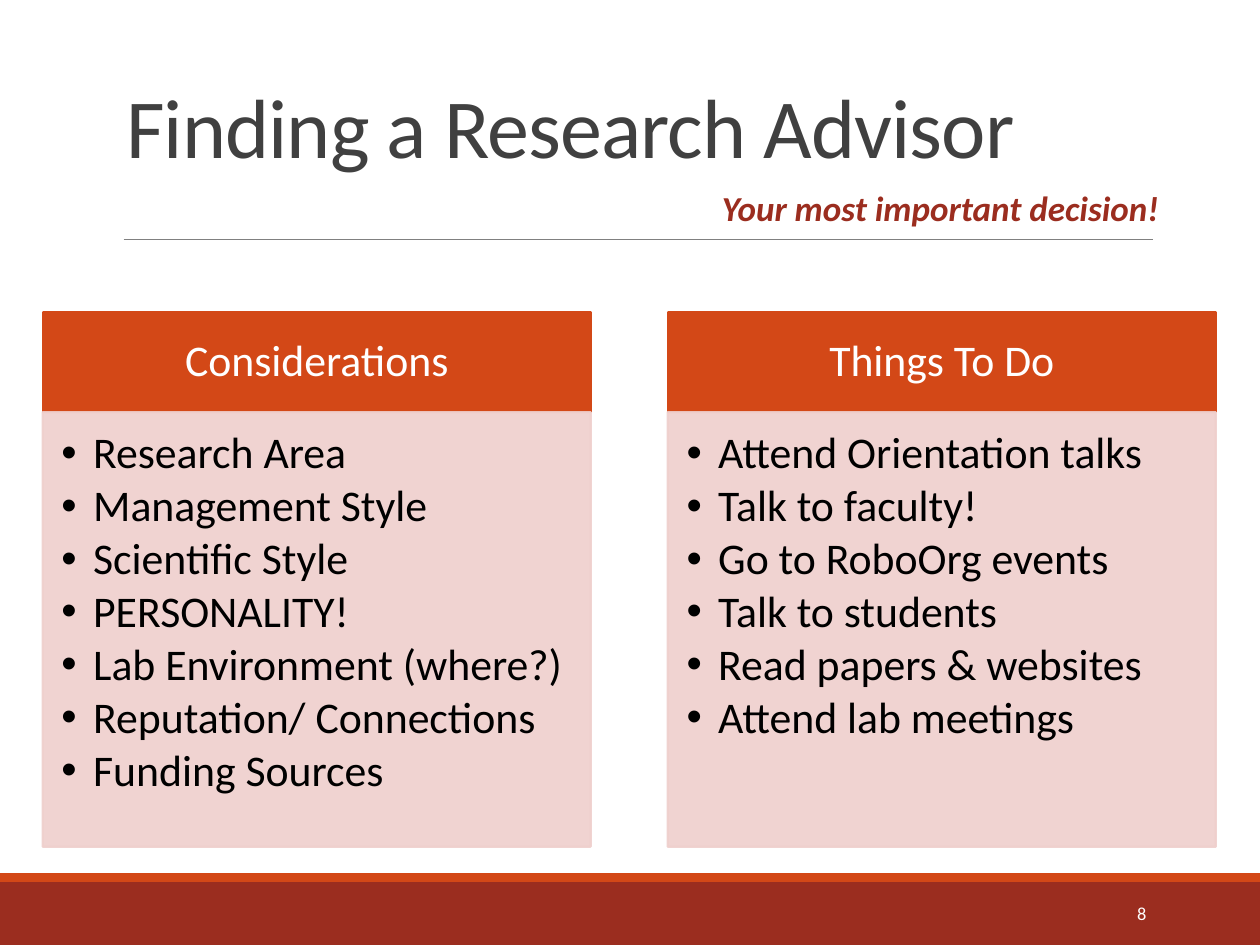
from lxml import etree
from pptx import Presentation
from pptx.dml.color import RGBColor
from pptx.enum import shapes, text
from pptx.oxml.ns import qn
from pptx.util import Cm, Pt

# Content
TITLE = "Finding a Research Advisor"
SUBTITLE = "Your most important decision!"
PAGE_NUMBER = "8"
CARDS = [
    ("Considerations", [
        "Research Area", "Management Style", "Scientific Style", "PERSONALITY!",
        "Lab Environment (where?)", "Reputation/ Connections", "Funding Sources",
    ]),
    ("Things To Do", [
        "Attend Orientation talks", "Talk to faculty!", "Go to RoboOrg events",
        "Talk to students", "Read papers & websites", "Attend lab meetings",
    ]),
]

# Style
FONT = "Calibri"
ORANGE = RGBColor(0xD3, 0x48, 0x17)
DARK_RED = RGBColor(0x9B, 0x2D, 0x1F)
PINK = RGBColor(0xEF, 0xCF, 0xCC)
GRAY = RGBColor(0x80, 0x80, 0x80)
CHARCOAL = RGBColor(0x40, 0x40, 0x40)
WHITE = RGBColor(0xFF, 0xFF, 0xFF)
BLACK = RGBColor(0, 0, 0)

# Layout, in centimetres
SLIDE_WIDTH, SLIDE_HEIGHT = 25.4, 19.05
FOOTER_TOP, STRIPE_TOP = 17.78, 17.6
CARD_LEFT, CARD_TOP, CARD_WIDTH, CARD_PITCH = 0.86, 6.3, 11.05, 12.6
HEADER_HEIGHT, BODY_HEIGHT = 2.01, 8.76


def add_box(slide, left, top, width, height, color, outlined=False, opacity=None):
    shape = slide.shapes.add_shape(
        shapes.MSO_SHAPE.RECTANGLE, Cm(left), Cm(top), Cm(width), Cm(height))
    shape.shadow.inherit = False
    shape.fill.solid()
    shape.fill.fore_color.rgb = color
    if outlined:
        shape.line.color.rgb = color
        shape.line.width = Pt(1.25)
    else:
        shape.line.fill.background()
    if opacity:
        for node in shape._element.spPr.iter(qn("a:srgbClr")):
            etree.SubElement(node, qn("a:alpha")).set("val", str(opacity * 1000))
    return shape


def set_frame(frame, anchor, margins):
    frame.word_wrap = True
    frame.auto_size = text.MSO_AUTO_SIZE.NONE
    frame.vertical_anchor = anchor
    (frame.margin_left, frame.margin_top,
     frame.margin_right, frame.margin_bottom) = [Cm(margin) for margin in margins]


def format_paragraph(paragraph, size, color, align, line_spacing=0.9, after=0):
    paragraph.alignment = align
    paragraph.line_spacing = line_spacing
    paragraph.space_before = Pt(0)
    paragraph.space_after = Pt(after)
    for run in paragraph.runs:
        run.font.name = FONT
        run.font.size = Pt(size)
        run.font.color.rgb = color


def add_bullet(paragraph):
    properties = paragraph._p.get_or_add_pPr()
    properties.set("marL", str(Cm(0.64)))
    properties.set("indent", str(-Cm(0.64)))
    etree.SubElement(properties, qn("a:buFont")).set("typeface", "Arial")
    etree.SubElement(properties, qn("a:buChar")).set("char", "•")


def add_label(slide, left, top, width, height, words, size, color, anchor, margins):
    box = slide.shapes.add_textbox(Cm(left), Cm(top), Cm(width), Cm(height))
    box.text_frame.text = words
    set_frame(box.text_frame, anchor, margins)
    format_paragraph(box.text_frame.paragraphs[0], size, color, text.PP_ALIGN.RIGHT)
    return box


def add_card(slide, left, heading, items):
    header = add_box(slide, left, CARD_TOP, CARD_WIDTH, HEADER_HEIGHT, ORANGE, outlined=True)
    header.text_frame.text = heading
    set_frame(header.text_frame, text.MSO_ANCHOR.MIDDLE, (0.48, 0.28, 0.48, 0.28))
    format_paragraph(header.text_frame.paragraphs[0], 25, WHITE, text.PP_ALIGN.CENTER)

    body = add_box(slide, left, CARD_TOP + HEADER_HEIGHT, CARD_WIDTH, BODY_HEIGHT,
                   PINK, outlined=True, opacity=90)
    body.text_frame.text = "\n".join(items)
    set_frame(body.text_frame, text.MSO_ANCHOR.TOP, (0.38, 0.38, 0.48, 0.56))
    for paragraph in body.text_frame.paragraphs:
        paragraph.level = 1
        add_bullet(paragraph)
        format_paragraph(paragraph, 25, BLACK, text.PP_ALIGN.LEFT, after=3.3)


def main():
    presentation = Presentation()
    presentation.slide_width, presentation.slide_height = Cm(SLIDE_WIDTH), Cm(SLIDE_HEIGHT)
    slide = presentation.slides.add_slide(presentation.slide_layouts[5])

    # Footer bands and rule under the title
    add_box(slide, 0, FOOTER_TOP, SLIDE_WIDTH, SLIDE_HEIGHT - FOOTER_TOP, DARK_RED)
    add_box(slide, 0, STRIPE_TOP, SLIDE_WIDTH, FOOTER_TOP - STRIPE_TOP, ORANGE)
    rule = slide.shapes.add_connector(
        shapes.MSO_CONNECTOR.STRAIGHT, Cm(2.49), Cm(4.83), Cm(23.24), Cm(4.83))
    rule.line.color.rgb = GRAY
    rule.line.width = Pt(0.5)
    etree.SubElement(rule._element.spPr, qn("a:effectLst"))

    # Title and subtitle
    title = slide.shapes.title
    title.left, title.top, title.width, title.height = Cm(2.29), Cm(0.25), Cm(20.95), Cm(3.43)
    title.text_frame.text = TITLE
    set_frame(title.text_frame, text.MSO_ANCHOR.BOTTOM, (0.25, 0.13, 0.25, 0.13))
    format_paragraph(title.text_frame.paragraphs[0], 48, CHARCOAL, text.PP_ALIGN.LEFT, 0.85)
    title.text_frame.paragraphs[0].runs[0].font._element.set("spc", "-50")

    subtitle = add_label(slide, 2.29, 3.73, 21.08, 1.47, SUBTITLE, 20, DARK_RED,
                         text.MSO_ANCHOR.TOP, (0, 0.13, 0, 0.13))
    font = subtitle.text_frame.paragraphs[0].runs[0].font
    font.bold = font.italic = True

    # Page number
    add_label(slide, 20.62, 17.93, 2.74, 1.02, PAGE_NUMBER, 10.5, WHITE,
              text.MSO_ANCHOR.MIDDLE, (0.25, 0.13, 0.25, 0.13))

    # Two cards side by side
    for index, (heading, items) in enumerate(CARDS):
        add_card(slide, CARD_LEFT + index * CARD_PITCH, heading, items)

    presentation.save("out.pptx")


if __name__ == "__main__":
    main()
